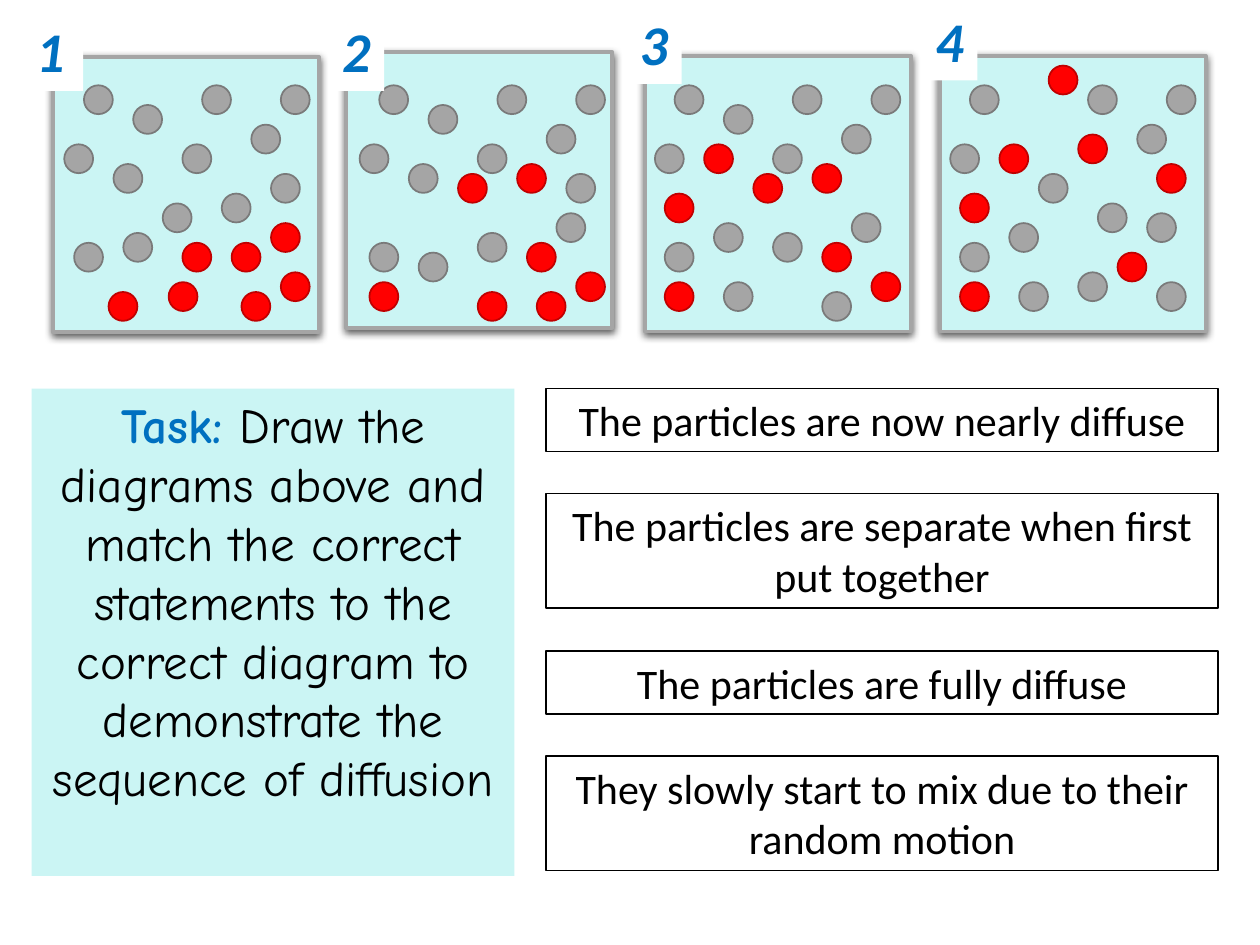
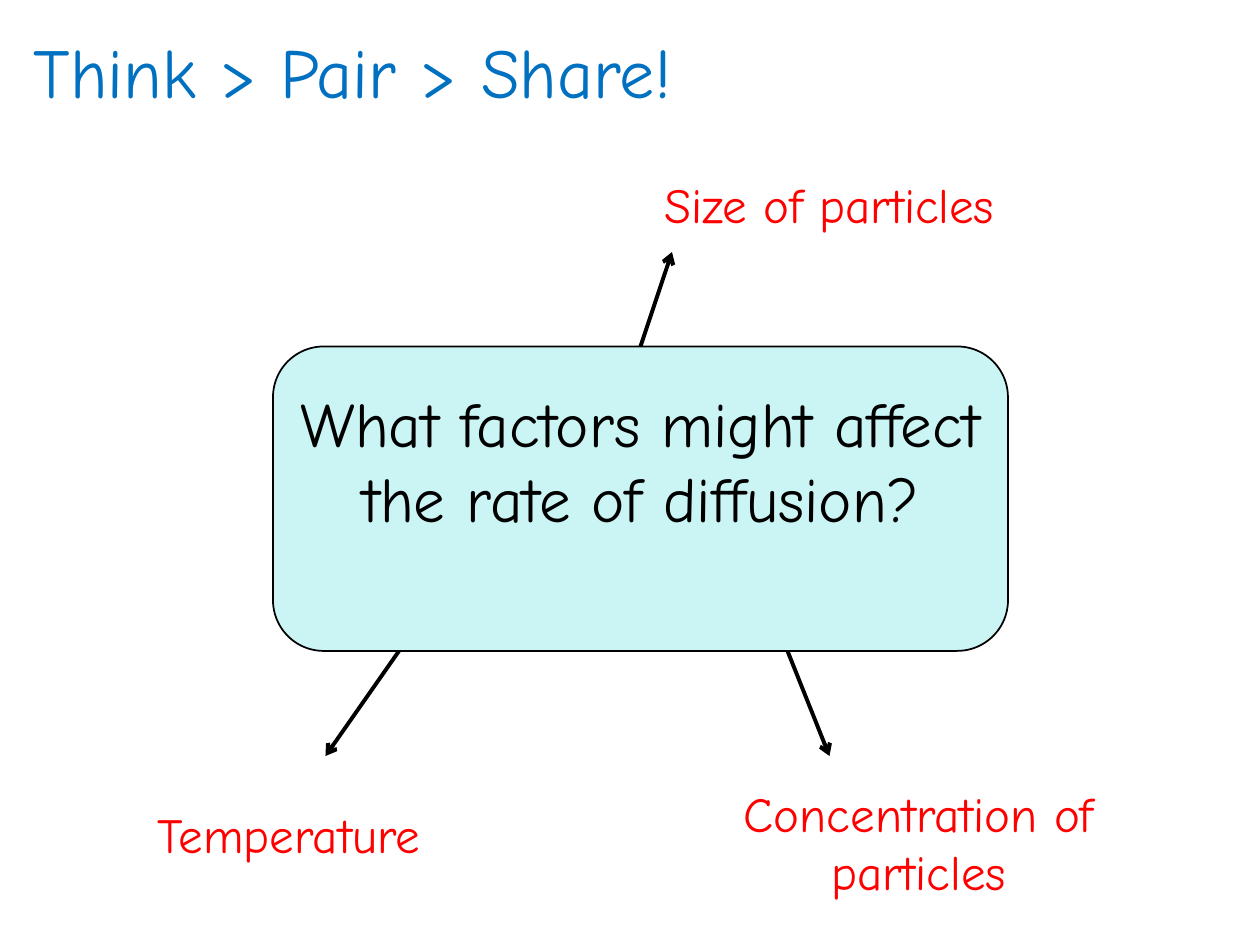
from lxml import etree
from pptx import Presentation
from pptx.dml.color import RGBColor
from pptx.enum.shapes import MSO_CONNECTOR, MSO_SHAPE
from pptx.enum.text import MSO_ANCHOR, MSO_AUTO_SIZE, PP_ALIGN
from pptx.oxml.ns import qn
from pptx.util import Pt

RECT, ROUND = MSO_SHAPE.RECTANGLE, MSO_SHAPE.ROUNDED_RECTANGLE
DISC = MSO_SHAPE.FLOWCHART_CONNECTOR
LINE = MSO_CONNECTOR.STRAIGHT
TOP = MSO_ANCHOR.TOP
FIXED = MSO_AUTO_SIZE.NONE
LEFT, MID = PP_ALIGN.LEFT, PP_ALIGN.CENTER

COLORS = {
    "aqua": "CBF5F4", "blue": "0070C0", "red": "FF0000", "wine": "C00000",
    "gray": "A5A5A5", "slate": "7A7A7A", "black": "000000", "white": "FFFFFF",
}
SANS, COMIC = "Calibri", "Comic Neue"

UNIT, DOT = 5.625, 16.5
PITCH = 30 * UNIT
STILL = [(19, 6), (14, 2), (1, 18), (2, 2), (0, 8), (22, 2)]
TANKS = [
    {"tank": (30.25, 32.5), "tag": (13.5, 6, 34),
     "gray": [(12, 8), (5, 10), (7, 4), (10, 14), (16, 13), (21, 11), (6, 17)],
     "red": [(21, 16), (17, 18), (12, 18), (10.6, 22), (22, 21), (18, 23), (4.5, 23)]},
    {"tank": (198, 30), "tag": (188.5, 6, 31),
     "gray": [(12, 8), (5, 10), (7, 4), (12, 17), (20, 15), (21, 11), (6, 19)],
     "red": [(16, 10), (17, 18), (10, 11), (12, 23), (22, 21), (18, 23), (1, 22)]},
    {"tank": (368.5, 32), "tag": (358.5, 2, 31),
     "gray": [(12, 8), (6, 16), (7, 4), (12, 17), (20, 15), (17, 23), (7, 22)],
     "red": [(16, 10), (17, 18), (10, 11), (1, 13), (22, 21), (5, 8), (1, 22)]},
    {"tank": (537, 32), "tag": (527.5, 0, 31),
     "gray": [(15, 14), (6, 16), (9, 11), (13, 21), (20, 15), (21, 22), (7, 22)],
     "red": [(21, 10), (10, 0), (13, 7), (1, 13), (17, 19), (5, 8), (1, 22)]},
]
CLAIMS = [
    ("The particles are now nearly diffuse", 36),
    ("The particles are separate when first put together", 65.5),
    ("The particles are fully diffuse", 36),
    ("They slowly start to mix due to their random motion", 65.5),
]
GAP = 24
TASK = ("Draw the diagrams above and match the correct statements to the "
        "correct diagram to demonstrate the sequence of diffusion")


def paint(name):
    """Return the colour of that name."""
    return RGBColor.from_string(COLORS[name])


def add_box(slide, kind, box, fill=None, edge=None, width=1):
    """Add a flat shape with the given fill and outline."""
    shape = slide.shapes.add_shape(kind, *map(Pt, box))
    shape.shadow.inherit = False
    if fill:
        shape.fill.solid()
        shape.fill.fore_color.rgb = paint(fill)
    else:
        shape.fill.background()
    if edge:
        shape.line.color.rgb = paint(edge)
        shape.line.width = Pt(width)
    else:
        shape.line.fill.background()
    return shape


def style(run, font, size, color, bold=False, slant=False):
    """Format one run."""
    run.font.name, run.font.size = font, Pt(size)
    run.font.color.rgb = paint(color)
    run.font.bold, run.font.italic = bold, slant


def write(shape, text, font, size, color, align=MID, **marks):
    """Fill a shape with one wrapped paragraph from the top."""
    frame = shape.text_frame
    frame.text = text
    frame.word_wrap = True
    frame.vertical_anchor = TOP
    para = frame.paragraphs[0]
    para.alignment = align
    style(para.runs[0], font, size, color, **marks)
    return para


def add_note(slide, box, text, size, color):
    """Add a centred text box."""
    note = slide.shapes.add_textbox(*map(Pt, box))
    write(note, text, COMIC, size, color)


def cast(shape):
    """Give a shape a soft shadow below."""
    glow = shape.element.spPr.find(qn("a:effectLst"))
    outer = etree.SubElement(glow, qn("a:outerShdw"), blurRad=str(Pt(4.5)),
                             dist=str(Pt(1.5)), dir="5400000", rotWithShape="0")
    tint = etree.SubElement(outer, qn("a:srgbClr"), val=COLORS["black"])
    etree.SubElement(tint, qn("a:alpha"), val="63000")


def add_tank(slide, left, top, data):
    """Draw a tank and its particles on a lattice from left and top."""
    cast(add_box(slide, RECT, (*data["tank"], 152, 157.5), "aqua", "gray", 2.25))
    groups = [(STILL + data["gray"], "gray", "slate"), (data["red"], "red", "wine")]
    for spots, fill, edge in groups:
        for col, row in spots:
            place = (left + col * UNIT, top + row * UNIT, DOT, DOT)
            add_box(slide, DISC, place, fill, edge)


def add_tag(slide, left, top, width, label):
    """Add the number at a tank's corner."""
    tag = add_box(slide, RECT, (left, top, width, 46), "white")
    write(tag, label, SANS, 32, "blue", LEFT, bold=True, slant=True)


def add_claims(slide, left, top, width):
    """Stack the statements with equal gaps."""
    for text, height in CLAIMS:
        claim = add_box(slide, RECT, (left, top, width, height), None, "black", 0.75)
        write(claim, text, SANS, 24, "black")
        top += height + GAP if height == 36 else 66 + GAP


def add_task(slide, box):
    """Add the task panel."""
    para = write(add_box(slide, RECT, box, "aqua"), "Task: ", COMIC, 28, "blue", bold=True)
    run = para.add_run()
    run.text = TASK
    style(run, COMIC, 28, "black")


def add_arrow(slide, start, end):
    """Add a black arrow."""
    arrow = slide.shapes.add_connector(LINE, *map(Pt, (*start, *end)))
    arrow.line.color.rgb = paint("black")
    arrow.line.width = Pt(2.25)
    props = arrow.element.spPr
    etree.SubElement(props.find(qn("a:ln")), qn("a:tailEnd"), type="arrow")
    etree.SubElement(props, qn("a:effectLst"))
    return arrow


def add_title(slide, box, text):
    """Place the slide title."""
    title = slide.shapes.title
    title.left, title.top, title.width, title.height = map(Pt, box)
    para = write(title, text, COMIC, 40, "blue", LEFT)
    title.text_frame.auto_size = FIXED
    para.line_spacing, para.space_before = 0.9, Pt(10)


def add_hub(slide, left, top, width, height):
    """Draw the question and the factors around it."""
    hub = add_box(slide, ROUND, (left, top, width, height), "aqua", "black")
    add_note(slide, (left - 12, top + 18, width + 24, 138),
             "What factors might affect the rate of diffusion?", 36, "black")
    base = top + height
    crown = add_arrow(slide, (left + width / 2, top), (left + 228, top - 54))
    crown.begin_connect(hub, 0)
    add_arrow(slide, (left + 294, base), (left + 318, base + 60))
    add_arrow(slide, (left + 72, base), (left + 30, base + 60))
    factors = [
        ("Size of particles", (left + 132, top - 102, 372, 41)),
        ("Temperature", (left - 132, base + 84, 282, 41)),
        ("Concentration of particles", (left + 228, base + 72, 282, 75)),
    ]
    for text, box in factors:
        add_note(slide, box, text, 28, "red")


def main():
    """Build both slides."""
    deck = Presentation()
    deck.slide_width, deck.slide_height = Pt(720), Pt(540)

    match = deck.slides.add_slide(deck.slide_layouts[6])
    for i, data in enumerate(TANKS):
        add_tank(match, 36.75 + i * PITCH, 37.5, data)
        add_tag(match, *data["tag"], str(i + 1))
    add_claims(match, 312, 222, 384)
    add_task(match, (18, 222, 276, 278.5))

    think = deck.slides.add_slide(deck.slide_layouts[5])
    add_title(think, (12, 18, 648, 60), "Think > Pair > Share!")
    add_hub(think, 156, 198, 420, 174)

    deck.save("out.pptx")


if __name__ == "__main__":
    main()
